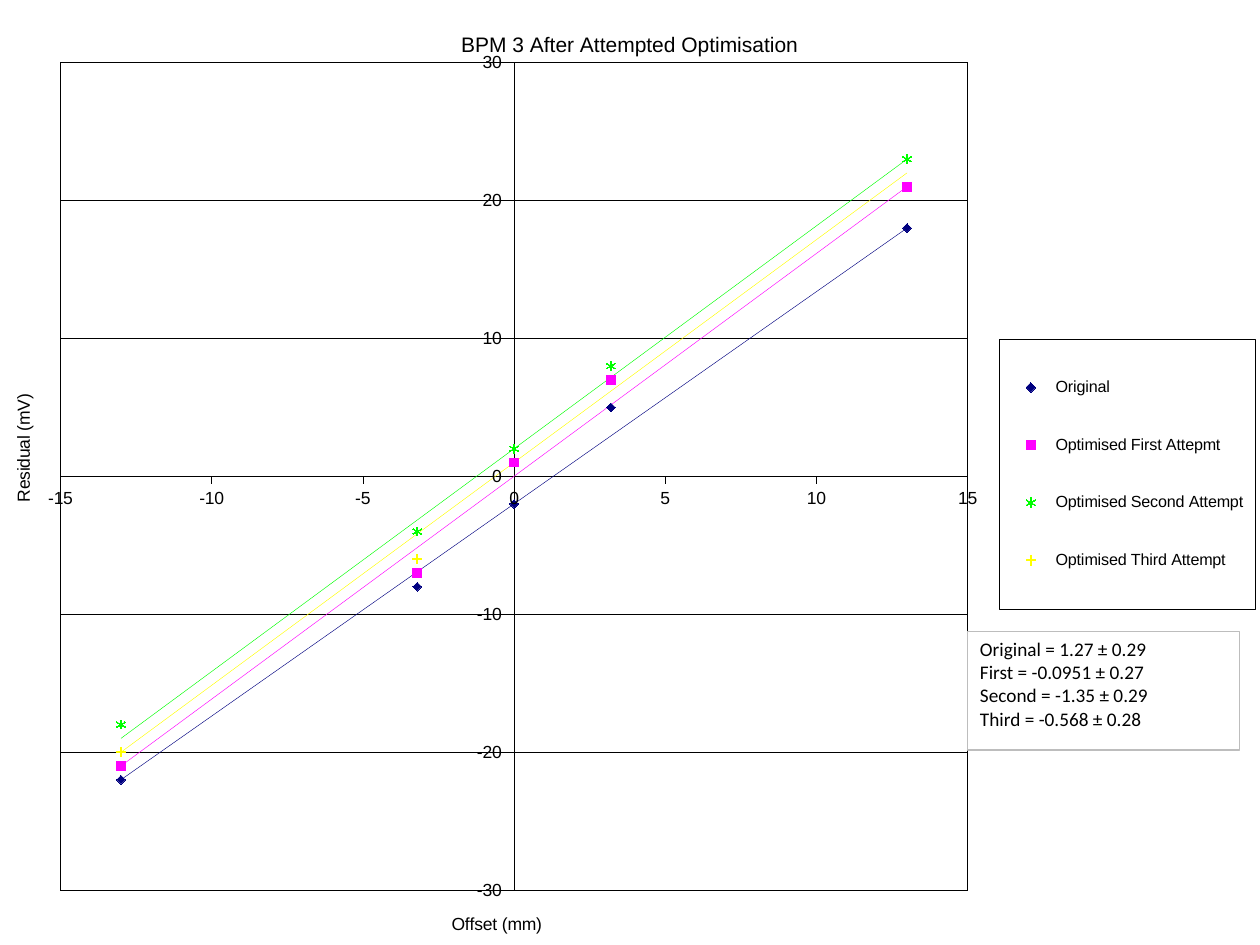
from lxml import etree
from pptx import Presentation
from pptx.chart.data import XyChartData
from pptx.dml.color import RGBColor
from pptx.enum.chart import (XL_CHART_TYPE, XL_LEGEND_POSITION, XL_MARKER_STYLE,
                             XL_TICK_MARK)
from pptx.enum.shapes import MSO_SHAPE
from pptx.enum.text import MSO_ANCHOR, PP_ALIGN
from pptx.oxml import parse_xml
from pptx.oxml.ns import nsdecls, qn
from pptx.util import Pt

SCATTER = XL_CHART_TYPE.XY_SCATTER
RIGHT = XL_LEGEND_POSITION.RIGHT
DIAMOND, SQUARE = XL_MARKER_STYLE.DIAMOND, XL_MARKER_STYLE.SQUARE
STAR, PLUS = XL_MARKER_STYLE.STAR, XL_MARKER_STYLE.PLUS
NO_MARK = XL_MARKER_STYLE.NONE
OUT, NO_TICK = XL_TICK_MARK.OUTSIDE, XL_TICK_MARK.NONE
RECT = MSO_SHAPE.RECTANGLE
LEFT, TOP = PP_ALIGN.LEFT, MSO_ANCHOR.TOP

OFFSETS = [-13, -3.2, 0, 3.2, 13]
ENDS = [-13, 13]
NAVY, PINK, GREEN, YELLOW = "000080", "FF00FF", "00FF00", "FFFF00"
SERIES = [
    ("Original", [-22, -8, -2, 5, 18], NAVY, DIAMOND),
    ("Optimised First Attepmt", [-21, -7, 1, 7, 21], PINK, SQUARE),
    ("Series 3", [-22, 18], NAVY, None),
    ("Series 4", [-21, 21], PINK, None),
    ("Optimised Second Attempt", [-18, -4, 2, 8, 23], GREEN, STAR),
    ("Series 6", [-19, 23], GREEN, None),
    ("Optimised Third Attempt", [-20, -6, 1, 7, 21], YELLOW, PLUS),
    ("Series 8", [-20, 22], YELLOW, None),
]
FITS = [
    "Original = 1.27 ± 0.29",
    "First = -0.0951 ± 0.27",
    "Second = -1.35 ± 0.29",
    "Third = -0.568 ± 0.28",
]


def color(code):
    return RGBColor.from_string(code)


def style(font, size=10, face="Arial", ink="000000"):
    font.size, font.name, font.bold = Pt(size), face, False
    font.color.rgb = color(ink)


def write(frame, text, **form):
    for i, line in enumerate(text.split("\n")):
        para = frame.add_paragraph() if i else frame.paragraphs[0]
        para.alignment = form.get("align")
        run = para.add_run()
        run.text = line
        style(run.font, form.get("size", 10), form.get("face", "Arial"))


def stroke(line, ink="000000", width=0.25):
    line.color.rgb = color(ink)
    line.width = Pt(width)


def place(node, inner=False, **box):
    for old in node.findall(qn("c:layout")):
        node.remove(old)
    layout = parse_xml(f"<c:layout {nsdecls('c')}><c:manualLayout/></c:layout>")
    parts = [("layoutTarget", "inner")] if inner else []
    parts += [("xMode", "edge"), ("yMode", "edge"), *box.items()]
    for tag, val in parts:
        etree.SubElement(layout[0], qn(f"c:{tag}")).set("val", str(val))
    over = node.find(qn("c:overlay"))
    if over is None:
        node.insert(0, layout)
    else:
        over.addprevious(layout)


def border():
    return parse_xml(
        f'<c:spPr {nsdecls("c", "a")}><a:noFill/><a:ln w="{Pt(0.25)}"><a:solidFill>'
        '<a:srgbClr val="000000"/></a:solidFill></a:ln></c:spPr>')


class Page:
    """Holds the slide being built and its element methods."""

    def __init__(self, deck):
        self.slide = deck.slides.add_slide(deck.slide_layouts[6])

    def chart(self, x, y, w, h):
        data = XyChartData()
        for name, vals, _, _ in SERIES:
            row = data.add_series(name)
            for pos, val in zip(OFFSETS if len(vals) > 2 else ENDS, vals):
                row.add_data_point(pos, val)
        chart = self.slide.shapes.add_chart(
            SCATTER, Pt(x), Pt(y), Pt(w), Pt(h), data).chart
        style(chart.font)
        chart.plots[0].vary_by_categories = False
        for row, (_, _, ink, mark) in zip(chart.plots[0].series, SERIES):
            self.series(row, ink, mark)

        self.title(chart.chart_title, chart, "BPM 3 After Attempted Optimisation",
                   12, 0.363, 0.028)
        self.axis(chart.category_axis, "Offset (mm)", 15, 5, 0.356, 0.962)
        self.axis(chart.value_axis, "Residual (mV)", 30, 10, 0.007, 0.413)
        stroke(chart.value_axis.major_gridlines.format.line)
        plot = chart.plots[0]._element.getparent()
        place(plot, inner=True, x=0.048, y=0.065, w=0.72, h=0.877)
        for old in plot.findall(qn("c:spPr")):
            plot.remove(old)
        plot.append(border())
        self.legend(chart)

    def series(self, row, ink, mark):
        row.smooth = False
        row.marker.style = mark or NO_MARK
        if mark is None:
            stroke(row.format.line, ink)
            return
        row.format.line.fill.background()
        row.marker.size = 5
        form = row.marker.format
        form.fill.solid()
        form.fill.fore_color.rgb = color(ink)
        stroke(form.line, ink)

    def title(self, title, owner, text, size, x, y):
        owner.has_title = True
        write(title.text_frame, text, size=size)
        place(title._element, x=x, y=y)

    def axis(self, axis, text, limit, step, x, y):
        axis.minimum_scale, axis.maximum_scale = -limit, limit
        axis.major_unit = step
        axis.has_major_gridlines = limit == 30
        axis.major_tick_mark, axis.minor_tick_mark = OUT, NO_TICK
        axis.tick_labels.number_format = "General"
        axis.tick_labels.number_format_is_linked = False
        style(axis.tick_labels.font)
        stroke(axis.format.line)
        self.title(axis.axis_title, axis, text, 10, x, y)

    def legend(self, chart):
        chart.has_legend = True
        legend = chart.legend
        legend.position = RIGHT
        legend.include_in_layout = False
        style(legend.font, 9.2)
        node = legend._element
        place(node, x=0.793, y=0.358, w=0.203, h=0.286)
        for i, (_, _, _, mark) in enumerate(SERIES):
            if mark is None:
                node.find(qn("c:layout")).addprevious(parse_xml(
                    f'<c:legendEntry {nsdecls("c")}><c:idx val="{i}"/>'
                    '<c:delete val="1"/></c:legendEntry>'))
        node.find(qn("c:overlay")).addnext(border())

    def note(self, text, x, y, w, h):
        box = self.slide.shapes.add_shape(RECT, Pt(x), Pt(y), Pt(w), Pt(h))
        box.shadow.inherit = False
        box.fill.solid()
        box.fill.fore_color.rgb = color("FFFFFF")
        stroke(box.line, "BDBDBD", 0.75)
        frame = box.text_frame
        frame.word_wrap, frame.vertical_anchor = True, TOP
        write(frame, text, size=11, face="Calibri", align=LEFT)


def main():
    deck = Presentation()
    deck.slide_width, deck.slide_height = Pt(720), Pt(540)
    page = Page(deck)
    page.chart(0, 0.7, 720, 539.3)
    page.note("\n".join(FITS), 552.9, 360.7, 155.5, 67.9)
    deck.save("out.pptx")


if __name__ == "__main__":
    main()
